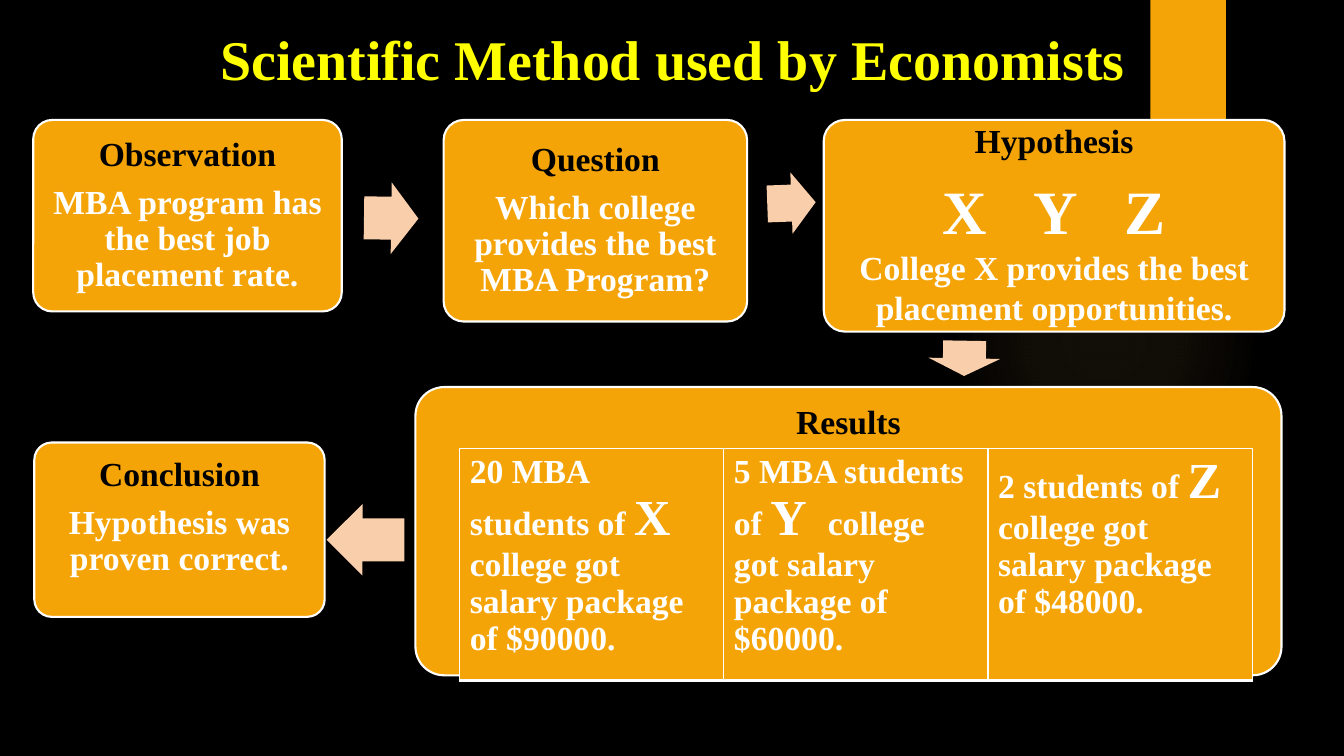
"""Builds a slide on the scientific method used by economists."""
from pptx import Presentation as Deck
from pptx.dml.color import RGBColor as Rgb
from pptx.enum.shapes import MSO_SHAPE as Kind
from pptx.enum.text import MSO_ANCHOR as Anchor, PP_ALIGN as Align
from pptx.oxml import parse_xml as to_xml
from pptx.oxml.ns import nsdecls
from pptx.util import Inches, Pt

HUES = {"black": "000000", "white": "FFFFFF", "title": "FFFF00",
        "gold": "F5A408", "peach": "F9CFAB", "glow": "FAC96A"}
FONT = "Times New Roman"


class Board:
    """Holds the style and the current slide."""

    def __init__(self, slide):
        self.slide = slide
        self.shapes = slide.shapes
        self.paint(slide.background.fill, "black")

    def paint(self, fill, hue):
        fill.solid()
        fill.fore_color.rgb = Rgb.from_string(HUES[hue])

    def letter(self, para, parts, hue, align=Align.CENTER):
        para.alignment = align
        for text, size, gap in parts:
            run = para.add_run()
            run.text = text
            run.font.name = FONT
            run.font.size = Pt(size)
            run.font.bold = True
            run.font.color.rgb = Rgb.from_string(HUES[hue])
            if gap:
                run._r.get_or_add_rPr().set("spc", str(gap * 100))

    def shape(self, kind, area, hue):
        item = self.shapes.add_shape(kind, *map(Inches, area))
        item.shadow.inherit = False
        item.line.fill.background()
        self.paint(item.fill, hue)
        return item

    def glow(self, area):
        item = self.shape(Kind.OVAL, area, "glow")
        stops = "".join(
            f'<a:gs pos="{pos}000"><a:srgbClr val="{HUES["glow"]}">'
            f'<a:alpha val="{alpha}000"/></a:srgbClr></a:gs>'
            for pos, alpha in ((0, 7), (36, 6), (69, 0), (100, 0)))
        grad = to_xml(
            f'<a:gradFill {nsdecls("a")}><a:gsLst>{stops}</a:gsLst>'
            '<a:path path="circle"><a:fillToRect l="50000" t="50000" '
            'r="50000" b="50000"/></a:path></a:gradFill>')
        props = item._element.spPr
        props.replace(props.find("{*}solidFill"), grad)

    def title(self, area, text):
        frame = self.shapes.add_textbox(*map(Inches, area)).text_frame
        frame.word_wrap = True
        frame.vertical_anchor = Anchor.MIDDLE
        self.letter(frame.paragraphs[0], [(text, 40, 0)], "title")

    def card(self, area, head, lines, anchor, tight=True):
        item = self.shape(Kind.ROUNDED_RECTANGLE, area, "gold")
        item.adjustments[0] = 0.1
        item.line.color.rgb = Rgb.from_string(HUES["white"])
        item.line.width = Pt(1.5)
        frame = item.text_frame
        frame.word_wrap = True
        frame.vertical_anchor = anchor
        frame.margin_left = frame.margin_right = Inches(0.1)
        frame.margin_top = frame.margin_bottom = Inches(0.1)
        for step, parts in enumerate([[(head, 24, 0)]] + lines):
            para = frame.add_paragraph() if step else frame.paragraphs[0]
            self.letter(para, parts, "white" if step else "black")
            if tight or not step:
                para.line_spacing = 0.9
                para.space_after = Pt(8.4)

    def arrow(self, area, turn):
        item = self.shape(Kind.RIGHT_ARROW, area, "peach")
        item.adjustments[0] = 0.6
        item.adjustments[1] = 0.5
        item.rotation = turn

    def table(self, area, cells):
        grid = self.shapes.add_table(1, len(cells), *map(Inches, area)).table
        grid.first_row = grid.horz_banding = False
        for cell, parts in zip(grid.rows[0].cells, cells):
            self.letter(cell.text_frame.paragraphs[0], parts, "white", Align.LEFT)
            props = cell._tc.get_or_add_tcPr()
            for side, width in (("L", 1), ("R", 1), ("T", 1), ("B", 3)):
                props.append(to_xml(
                    f'<a:ln{side} {nsdecls("a")} w="{Pt(width)}"><a:solidFill>'
                    f'<a:srgbClr val="{HUES["white"]}"/></a:solidFill></a:ln{side}>'))
            self.paint(cell.fill, "gold")


def main():
    deck = Deck()
    deck.slide_width, deck.slide_height = Inches(13.33), Inches(7.5)
    board = Board(deck.slides.add_slide(deck.slide_layouts[6]))
    board.glow((9.41, 1.83, 3.08, 3.08))
    board.shape(Kind.RECTANGLE, (11.41, 0, 0.75, 1.25), "gold")
    board.title((0.92, 0.2, 11.5, 0.76), "Scientific Method used by Economists")

    board.card((0.33, 1.19, 3.06, 1.9), "Observation",
               [[("MBA program has the best job placement rate.", 24, 0)]],
               Anchor.MIDDLE)
    board.card((4.4, 1.19, 3.01, 2), "Question",
               [[("Which college provides the best MBA Program?", 24, 0)]],
               Anchor.MIDDLE)
    names = [("X", 44, 0), (" ", 44, 22), ("Y", 44, 0), (" ", 44, 22), ("Z", 44, 0)]
    board.card((8.17, 1.19, 4.57, 2.1), "Hypothesis",
               [names, [("College X provides the best placement opportunities.", 24, 0)]],
               Anchor.MIDDLE, tight=False)
    board.card((4.12, 3.84, 8.59, 2.86), "Results", [], Anchor.TOP)
    board.card((0.34, 4.39, 2.88, 1.73), "Conclusion",
               [[("Hypothesis was proven correct.", 24, 0)]], Anchor.TOP)

    for area, turn in (((3.61, 1.81, 0.54, 0.71), 0.8),
                       ((7.61, 1.71, 0.48, 0.61), 357.9),
                       ((9.39, 3.2, 0.35, 0.71), 91),
                       ((3.24, 5, 0.77, 0.71), 180.1)):
        board.arrow(area, turn)

    board.table((4.56, 4.45, 7.86, 2.23), [
        [("20 MBA students of ", 24, 0), ("X", 36, 0),
         (" college got salary package of $90000.", 24, 0)],
        [("5 MBA students of ", 24, 0), ("Y", 36, 0), (" ", 36, 6),
         ("college got salary package of $60000.", 24, 0)],
        [("2 students of ", 24, 0), ("Z", 36, 0),
         (" college got salary package of $48000.", 24, 0)]])
    deck.save("out.pptx")


if __name__ == "__main__":
    main()
